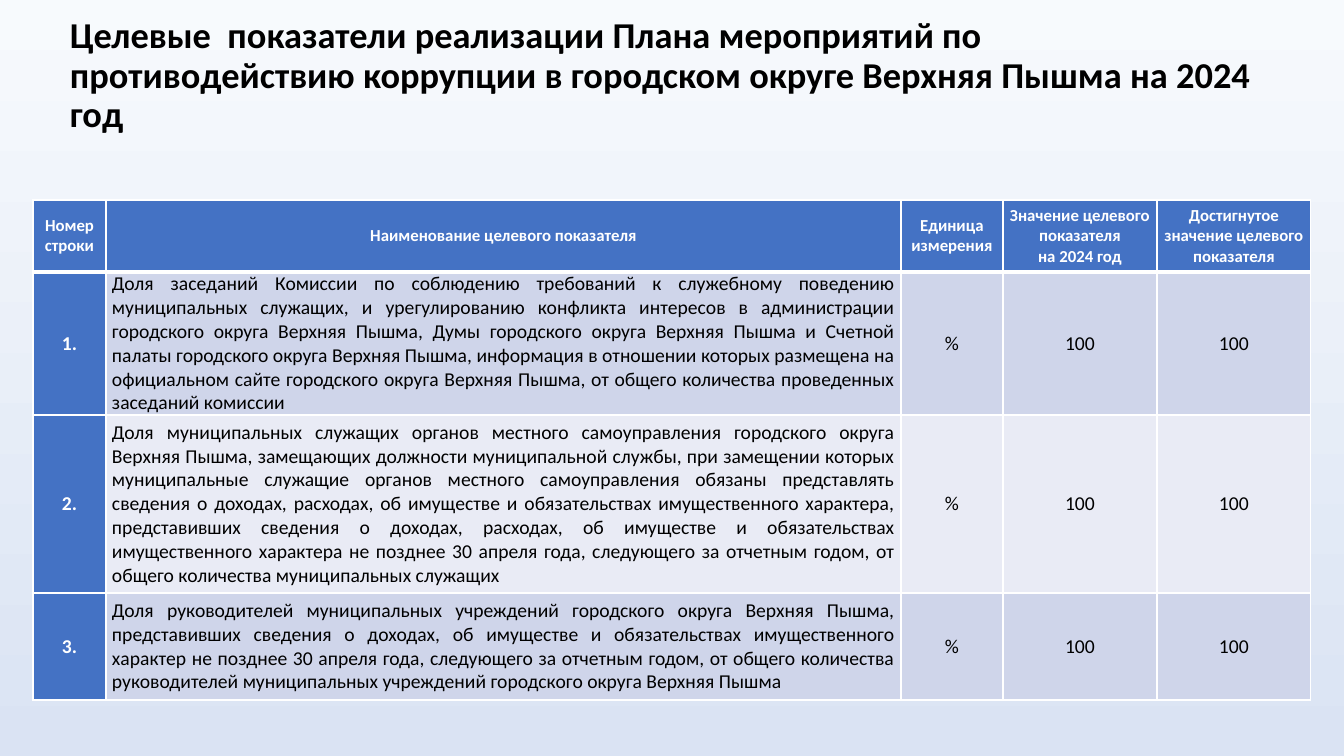
from lxml.etree import SubElement
from pptx import Presentation
from pptx.dml.color import RGBColor
from pptx.enum.text import MSO_ANCHOR, PP_ALIGN
from pptx.oxml.ns import qn
from pptx.util import Emu, Pt


def px(length):
    return Emu(round(length * 914400 / 100.8))


def color(hex_code):
    return RGBColor.from_string(hex_code)


BLUE, WHITE, BLACK = "4472C4", "FFFFFF", "000000"
BANDS = ["CFD5EA", "E9EBF5"]
COLUMN_WIDTHS = [73, 795, 102, 154, 154]
ROW_HEIGHTS = [72, 143, 178, 107]
HEADINGS = [
    "Номер строки",
    "Наименование целевого показателя",
    "Единица измерения",
    "Значение целевого показателя\vна 2024 год",
    "Достигнутое значение целевого показателя",
]
INDICATORS = [
    "Доля заседаний Комиссии по соблюдению требований к служебному поведению "
    "муниципальных служащих, и урегулированию конфликта интересов в администрации "
    "городского округа Верхняя Пышма, Думы городского округа Верхняя Пышма и Счетной "
    "палаты городского округа Верхняя Пышма, информация в отношении которых размещена "
    "на официальном сайте городского округа Верхняя Пышма, от общего количества "
    "проведенных заседаний комиссии",
    "Доля муниципальных служащих органов местного самоуправления городского округа "
    "Верхняя Пышма, замещающих должности муниципальной службы, при замещении которых "
    "муниципальные служащие органов местного самоуправления обязаны представлять "
    "сведения о доходах, расходах, об имуществе и обязательствах имущественного характера, "
    "представивших сведения о доходах, расходах, об имуществе и обязательствах "
    "имущественного характера не позднее 30 апреля года, следующего за отчетным годом, от "
    "общего количества муниципальных служащих",
    "Доля руководителей муниципальных учреждений городского округа Верхняя Пышма, "
    "представивших сведения о доходах, об имуществе и обязательствах имущественного "
    "характер не позднее 30 апреля года, следующего за отчетным годом, от общего количества "
    "руководителей муниципальных учреждений городского округа Верхняя Пышма",
]

deck = Presentation()
deck.slide_width, deck.slide_height = px(1344), px(756)
slide = deck.slides.add_slide(deck.slide_layouts[6])

# Background
backdrop = slide.background.fill
backdrop.gradient()
backdrop.gradient_angle = 270
for stop, position, shade in zip(backdrop.gradient_stops, [0, 1], ["F7FAFD", "DAE3F3"]):
    stop.position = position
    stop.color.rgb = color(shade)

# Title
title = slide.shapes.add_textbox(px(60), px(24), px(1215), px(105)).text_frame
title.word_wrap = True
title.vertical_anchor = MSO_ANCHOR.MIDDLE
heading = title.paragraphs[0]
heading.text = (
    "Целевые  показатели реализации Плана мероприятий по "
    "противодействию коррупции в городском округе Верхняя Пышма на 2024 год"
)
heading.line_spacing = 0.9
heading.font.name = "Calibri"
heading.font.size = Pt(26)
heading.font.bold = True
heading.font.color.rgb = color(BLACK)

# Table of indicators
rows = [HEADINGS] + [
    [f"{number}.", indicator, "%", "100", "100"]
    for number, indicator in enumerate(INDICATORS, 1)
]
table = slide.shapes.add_table(
    len(rows), len(HEADINGS), px(33), px(200), px(sum(COLUMN_WIDTHS)), px(sum(ROW_HEIGHTS))
).table
for column, width in zip(table.columns, COLUMN_WIDTHS):
    column.width = px(width)
for row, height in zip(table.rows, ROW_HEIGHTS):
    row.height = px(height)

for row_index, texts in enumerate(rows):
    for column_index, text in enumerate(texts):
        is_header = row_index == 0
        is_accent = is_header or column_index == 0
        cell = table.cell(row_index, column_index)
        cell.margin_left = cell.margin_right = px(6)
        cell.margin_top = cell.margin_bottom = 0
        cell.vertical_anchor = MSO_ANCHOR.MIDDLE

        properties = cell._tc.get_or_add_tcPr()
        for side in ["L", "R", "T", "B"]:
            under_header = (row_index, side) in [(0, "B"), (1, "T")]
            border = SubElement(properties, qn(f"a:ln{side}"), w=str(Pt(3 if under_header else 1)))
            SubElement(SubElement(border, qn("a:solidFill")), qn("a:srgbClr"), val=WHITE)

        cell.fill.solid()
        cell.fill.fore_color.rgb = color(BLUE if is_accent else BANDS[(row_index - 1) % 2])

        paragraph = cell.text_frame.paragraphs[0]
        paragraph.text = text
        is_indicator = column_index == 1 and not is_header
        paragraph.alignment = PP_ALIGN.JUSTIFY if is_indicator else PP_ALIGN.CENTER
        paragraph.font.name = "Calibri"
        paragraph.font.size = Pt(12 if is_header else 14)
        paragraph.font.bold = is_accent
        paragraph.font.color.rgb = color(WHITE if is_accent else BLACK)

deck.save("out.pptx")
